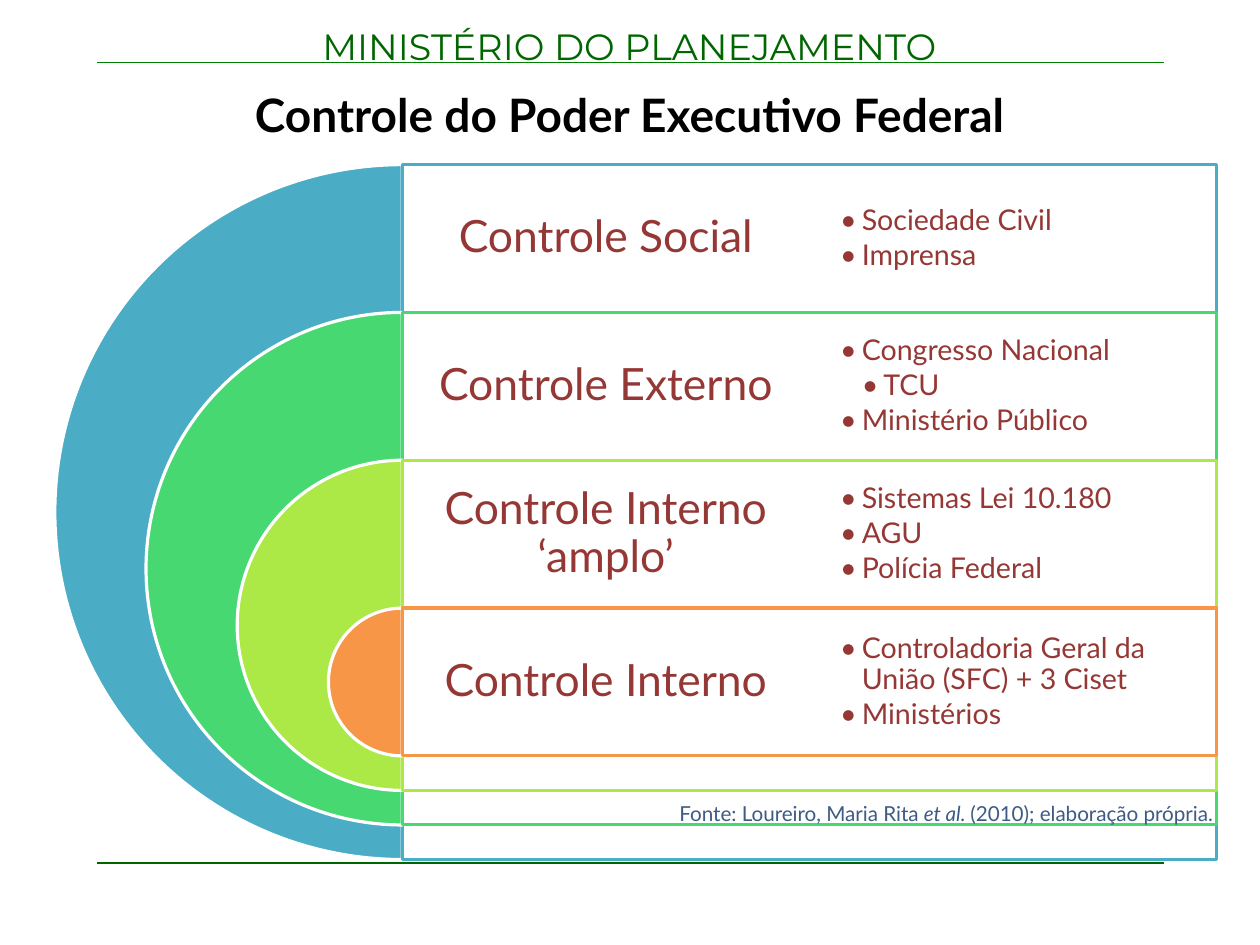
from lxml import etree
from pptx import Presentation
from pptx import util as u
from pptx.dml.color import RGBColor
from pptx.enum import shapes, text
from pptx.oxml import ns

COLORS = {"header": "006600", "top_rule": "008000", "title": "000000",
          "label": "953735", "source": "3D5B84", "white": "FFFFFF",
          "social": "4BACC6", "externo": "47D872", "amplo": "ACE946",
          "interno": "F79646"}

prs = Presentation()
prs.slide_width, prs.slide_height = u.Cm(28), u.Cm(21)
s = prs.slides.add_slide(prs.slide_layouts[6])

W = prs.slide_width.inches
LEFT, TOP = 3.52, 1.44
COL, ROW = 3.56, 3.88 / 3
DIAMETER = 6.08
SHRINK = (DIAMETER - ROW) / 3
INDENT = 0.19


def rgb(name):
    return RGBColor.from_string(COLORS[name])


def add_text(paragraphs, x, y, w, h, size, color, font="Lato", bold=None,
             align="LEFT", anchor="TOP", inset=(0.1, 0.05), spacing=None,
             after=0, bullets=False):
    tf = s.shapes.add_textbox(*map(u.Inches, (x, y, w, h))).text_frame
    tf.word_wrap = True
    tf.vertical_anchor = text.MSO_ANCHOR[anchor]
    tf.margin_left = tf.margin_right = u.Inches(inset[0])
    tf.margin_top = tf.margin_bottom = u.Inches(inset[1])
    for i, (level, runs) in enumerate(paragraphs):
        p = tf.paragraphs[0] if i == 0 else tf.add_paragraph()
        if bullets:
            p.level = level
            pPr = p._p.get_or_add_pPr()
            pPr.set("marL", str(u.Inches(INDENT * level)))
            pPr.set("indent", str(-u.Inches(INDENT)))
            etree.SubElement(pPr, ns.qn("a:buFont")).set("typeface", font)
            etree.SubElement(pPr, ns.qn("a:buChar")).set("char", "•")
        p.alignment = text.PP_ALIGN[align]
        p.line_spacing = spacing
        p.space_after = u.Pt(after)
        for content, italic in runs:
            r = p.add_run()
            r.text = content
            r.font.name, r.font.size = font, u.Pt(size)
            r.font.bold, r.font.italic = bold, italic
            r.font.color.rgb = rgb(color)


add_text([(0, [("MINISTÉRIO DO PLANEJAMENTO", None)])], 0.51, 0.09, 10, 0.56,
         23, "header", font="Montserrat", align="CENTER", spacing=1.18)

for y, color in ((0.55, "top_rule"), (7.55, "header")):
    rule = s.shapes.add_connector(shapes.MSO_CONNECTOR.STRAIGHT,
                                  *map(u.Inches, (0.85, y, 10.18, y)))
    rule.line.color.rgb = rgb(color)
    rule.line.width = u.Pt(0.75)
    etree.SubElement(rule._element.spPr, ns.qn("a:effectLst"))

add_text([(0, [("Controle do Poder Executivo Federal", None)])], 0, 0.75, W, 0.49,
         29, "title", bold=True, align="CENTER", inset=(0.11, 0), spacing=1.01)

controls = [
    ("Controle Social", "social", [(1, "Sociedade Civil"), (1, "Imprensa")]),
    ("Controle Externo", "externo",
     [(1, "Congresso Nacional"), (2, "TCU"), (1, "Ministério Público")]),
    ("Controle Interno ‘amplo’", "amplo",
     [(1, "Sistemas Lei 10.180"), (1, "AGU"), (1, "Polícia Federal")]),
    ("Controle Interno", "interno",
     [(1, "Controladoria Geral da União (SFC) + 3 Ciset"), (1, "Ministérios")]),
]

for i, (label, color, items) in enumerate(controls):
    y = TOP + i * ROW
    d = DIAMETER - i * SHRINK
    pie = s.shapes.add_shape(shapes.MSO_SHAPE.PIE,
                             *map(u.Inches, (LEFT - d / 2, y, d, d)))
    pie.adjustments[0], pie.adjustments[1] = 54, 162
    pie.fill.solid()
    pie.fill.fore_color.rgb = rgb(color)
    frame = s.shapes.add_shape(shapes.MSO_SHAPE.RECTANGLE,
                               *map(u.Inches, (LEFT, y, 2 * COL, d)))
    frame.fill.solid()
    frame.fill.fore_color.rgb = rgb("white")
    for sp, edge in ((pie, "white"), (frame, color)):
        sp.shadow.inherit = False
        sp.line.color.rgb = rgb(edge)
        sp.line.width = u.Pt(2)
    add_text([(0, [(label, None)])], LEFT, y, COL, ROW, 28, "label",
             align="CENTER", anchor="MIDDLE", inset=(0.12, 0.12), spacing=0.9)
    add_text([(level, [(item, None)]) for level, item in items],
             LEFT + COL, y, COL, ROW, 18, "label", anchor="MIDDLE",
             inset=(0.27, 0.27), spacing=0.9, after=2.7, bullets=True)

add_text([(0, [("Fonte: Loureiro, Maria Rita ", None), ("et al. ", True),
               ("(2010); elaboração própria.", None)])],
         3.69, 6.95, 7.03, 0.33, 13, "source", align="RIGHT", inset=(0.11, 0.06))

prs.save("out.pptx")
